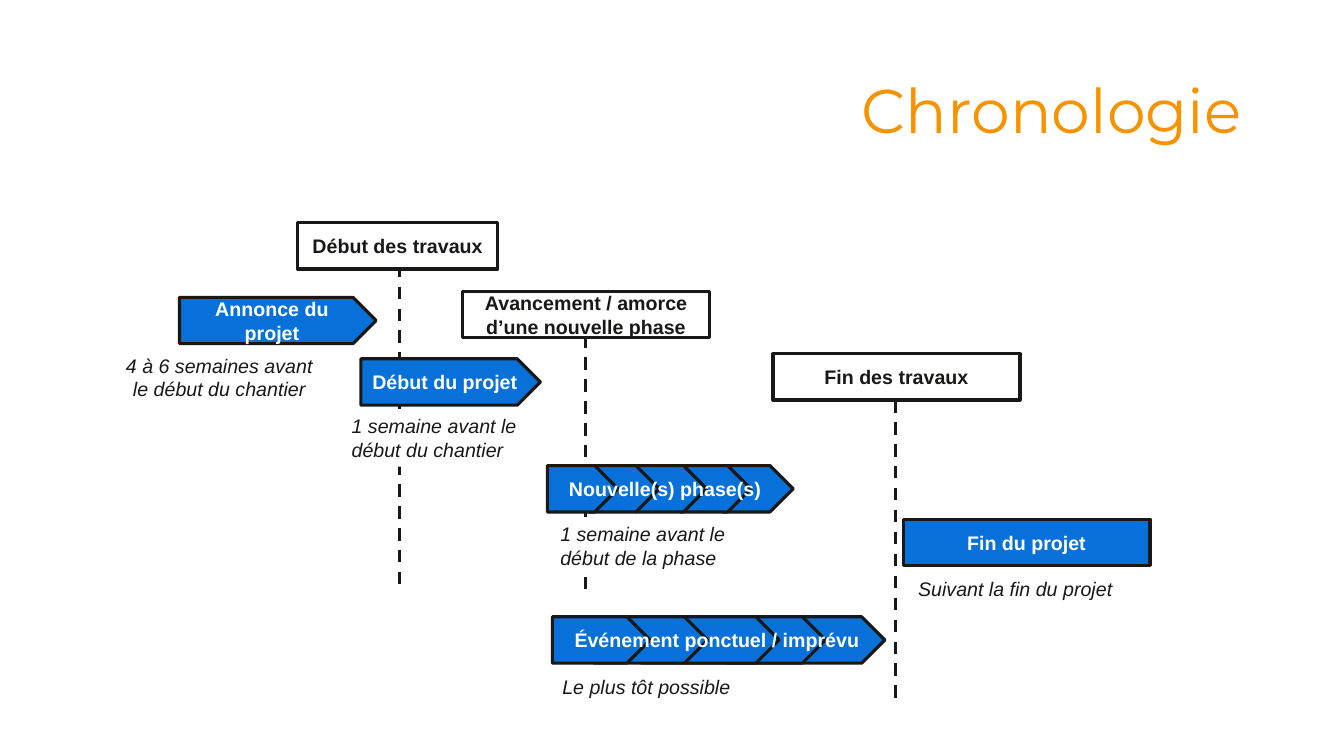
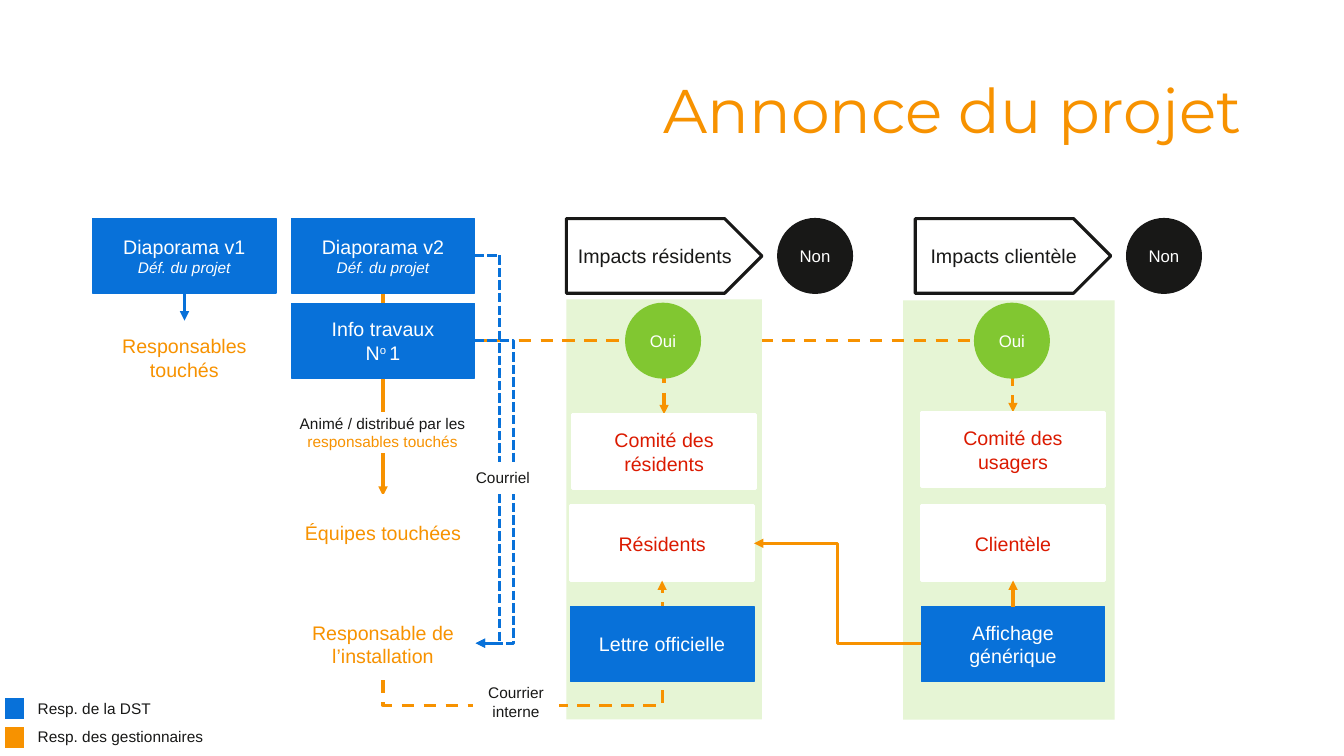
from copy import deepcopy
from dataclasses import dataclass

from lxml.etree import SubElement
from pptx import Presentation
from pptx.dml.color import RGBColor
from pptx.enum.dml import MSO_LINE
from pptx.enum.shapes import MSO_CONNECTOR, MSO_SHAPE
from pptx.enum.text import MSO_ANCHOR, PP_ALIGN
from pptx.oxml.ns import qn
from pptx.util import Pt


@dataclass(frozen=True)
class Theme:
    blue: str = "0871D9"
    orange: str = "F79200"
    ink: str = "181817"
    white: str = "FFFFFF"
    red: str = "DB1A00"
    green: str = "81C731"
    pale_green: str = "E6F5D5"
    title_font: str = "Montserrat"
    body_font: str = "Arial"
    title_size: float = 44
    body_size: float = 14
    answer_size: float = 12
    small_size: float = 11
    stroke: float = 2.25
    thin: float = 1
    legend_border: float = 6


@dataclass(frozen=True)
class Branch:
    question: str
    committee: str
    audience: str
    document: str
    left: float
    audience_left: float
    committee_top: float
    panel: tuple


T = Theme()
STEP_HEIGHT = 33.1
NODE_WIDTH, NODE_HEIGHT = 131, 53.3
TOP_ROW, SECOND_ROW, AUDIENCE_ROW, LAST_ROW = 156.2, 216.7, 361.4, 433.4
SOURCE_COLUMN, INFO_COLUMN = 66.2, 208.1
INFO_AXIS = 273.6
INFO_EDGE = 339.1
BRANCH_AXIS = 69.7  # from the left edge of a branch

BRANCHES = (
    Branch("Impacts résidents", "Comité des résidents", "Résidents",
           "Lettre officielle", 404.6, 407.5, 295.9, (404.6, 213.8, 139.7, 300.2)),
    Branch("Impacts clientèle", "Comité des usagers", "Clientèle",
           "Affichage\vgénérique", 653.8, 658.1, 294.5, (645.1, 214.6, 151.2, 299.5)),
)


# Text
def style_run(run, size, color, bold=False, italic=False, font=T.body_font):
    run.font.name = font
    run.font.size = Pt(size)
    run.font.bold = bold
    run.font.italic = italic
    run.font.color.rgb = RGBColor.from_string(color)


def write(frame, text, size, color, align=PP_ALIGN.CENTER, anchor=MSO_ANCHOR.MIDDLE, **style):
    frame.word_wrap = True
    frame.vertical_anchor = anchor
    frame.text = text
    paragraph = frame.paragraphs[0]
    paragraph.alignment = align
    for run in paragraph.runs:
        style_run(run, size, color, **style)
    for line_break in paragraph._p.findall(qn("a:br")):
        line_break.insert(0, deepcopy(paragraph.runs[0]._r.rPr))
    return paragraph


def add_span(paragraph, text, size, color, raised=False):
    run = paragraph.add_run()
    run.text = text
    style_run(run, size, color)
    if raised:
        run.font._element.set("baseline", "30000")


def add_title(slide, text):
    title = slide.shapes.add_textbox(Pt(139.7), Pt(28.8), Pt(754.6), Pt(104.4))
    paragraph = write(title.text_frame, text, T.title_size, T.orange,
                      PP_ALIGN.RIGHT, font=T.title_font)
    paragraph.line_spacing = 0.9


# Shapes
def add_box(slide, area, fill=None, line=None, width=T.stroke, kind=MSO_SHAPE.RECTANGLE):
    box = slide.shapes.add_shape(kind, *map(Pt, area))
    box.shadow.inherit = False
    if fill:
        box.fill.solid()
        box.fill.fore_color.rgb = RGBColor.from_string(fill)
    else:
        box.fill.background()
    if line:
        box.line.color.rgb = RGBColor.from_string(line)
        box.line.width = Pt(width)
    else:
        box.line.fill.background()
    return box


def add_node(slide, text, left, top, color=None):
    """White node with coloured text, or a blue document when no colour is given."""
    area = (left, top, NODE_WIDTH, NODE_HEIGHT)
    if color:
        node = add_box(slide, area, T.white, T.white)
    else:
        node = add_box(slide, area, T.blue, T.blue, T.thin)
    return write(node.text_frame, text, T.body_size, color or T.white)


def add_label(slide, text, area):
    label = add_box(slide, area, T.white, T.white)
    return write(label.text_frame, text, T.small_size, T.ink)


def add_answer(slide, text, left, top, color):
    answer = add_box(slide, (left, top, NODE_HEIGHT, NODE_HEIGHT), color, color,
                     T.thin, MSO_SHAPE.OVAL)
    write(answer.text_frame, text, T.answer_size, T.white)


# Lines and arrows
def style_line(connector, color, dash, arrow):
    connector.line.color.rgb = RGBColor.from_string(color)
    connector.line.width = Pt(T.stroke)
    if dash:
        connector.line.dash_style = dash
    if arrow:
        SubElement(connector.line._get_or_add_ln(), qn("a:tailEnd"), type="triangle")
    SubElement(connector._element.spPr, qn("a:effectLst"))


def add_line(slide, begin, end, color, dash=None, arrow=True):
    connector = slide.shapes.add_connector(MSO_CONNECTOR.STRAIGHT, *map(Pt, begin + end))
    style_line(connector, color, dash, arrow)


def add_elbow(slide, begin, end, color, dash=None, bend=None, vertical=False):
    """Arrow turning once, or twice at distance bend from its beginning."""
    length = abs(end[0] - begin[0])
    if vertical:  # leaves downwards: a quarter turn about the centre
        length = abs(end[1] - begin[1])
        x, y = ((a + b) / 2 for a, b in zip(begin, end))
        begin, end = ((x + py - y, y - px + x) for px, py in (begin, end))
    connector = slide.shapes.add_connector(MSO_CONNECTOR.ELBOW, *map(Pt, (*begin, *end)))
    properties = connector._element.spPr
    geometry = properties.find(qn("a:prstGeom"))
    if vertical:
        properties.find(qn("a:xfrm")).set("rot", "5400000")
    if bend is None:
        geometry.set("prst", "bentConnector2")
    else:
        SubElement(geometry.find(qn("a:avLst")), qn("a:gd"), name="adj1",
                   fmla=f"val {round(bend / length * 100000)}")
    style_line(connector, color, dash, True)


# Timeline parts
def add_milestone(slide, text, left, top, width, axis, line_top, line_bottom):
    add_line(slide, (axis, line_top), (axis, line_bottom), T.ink, MSO_LINE.DASH, False)
    box = add_box(slide, (left, top, width, STEP_HEIGHT), T.white, T.ink)
    write(box.text_frame, text, T.body_size, T.ink, bold=True)


def add_step(slide, text, left, top, width, kind=MSO_SHAPE.PENTAGON):
    step = add_box(slide, (left, top, width, STEP_HEIGHT), T.blue, T.ink, kind=kind)
    write(step.text_frame, text, T.body_size, T.white, bold=True)


def add_repeated_step(slide, text, left, top, width, chevrons):
    for chevron_left, chevron_width in chevrons:
        add_box(slide, (chevron_left, top, chevron_width, STEP_HEIGHT), T.blue, T.ink,
                kind=MSO_SHAPE.PENTAGON)
    label = add_box(slide, (left, top - 0.4, width, STEP_HEIGHT), kind=MSO_SHAPE.PENTAGON)
    write(label.text_frame, text, T.body_size, T.white, bold=True)


def add_delay(slide, text, left, top, width, height, align=PP_ALIGN.LEFT):
    delay = add_box(slide, (left, top, width, height), T.white)
    write(delay.text_frame, text, T.body_size, T.ink, align, MSO_ANCHOR.TOP, italic=True)


# Legend
def add_legend(slide, entries):
    legend = slide.shapes.add_table(len(entries), 2, Pt(0.7), Pt(496.1), Pt(163), Pt(40)).table
    legend.first_row = legend.horz_banding = False
    legend.columns[0].width, legend.columns[1].width = Pt(19), Pt(144)
    for row, (color, text) in enumerate(entries):
        swatch, caption = legend.cell(row, 0), legend.cell(row, 1)
        write(caption.text_frame, text, T.small_size, T.ink, PP_ALIGN.LEFT)
        SubElement(swatch.text_frame.paragraphs[0]._p, qn("a:endParaRPr"),
                   sz=str(T.small_size * 100))
        for cell, fill in ((swatch, color), (caption, T.white)):
            cell.vertical_anchor = MSO_ANCHOR.MIDDLE
            cell.fill.solid()
            cell.fill.fore_color.rgb = RGBColor.from_string(fill)
            add_cell_borders(cell)


def add_cell_borders(cell):
    properties = cell._tc.get_or_add_tcPr()
    for position, side in enumerate(("lnL", "lnR", "lnT", "lnB")):
        border = SubElement(properties, qn(f"a:{side}"), w=str(Pt(T.legend_border)))
        SubElement(SubElement(border, qn("a:solidFill")), qn("a:srgbClr"), val=T.white)
        properties.insert(position, border)


# Slides
def build_timeline(slide):
    add_title(slide, "Chronologie")
    for milestone in (
        ("Début des travaux", 212.4, 159.1, 143.3, 285.1, 157.7, 416.9),
        ("Avancement / amorce d’une nouvelle phase", 330.5, 208.1, 176.4, 418, 208.1, 423.4),
        ("Fin des travaux", 552.2, 252.7, 176.4, 639.8, 285.8, 504),
    ):
        add_milestone(slide, *milestone)

    add_step(slide, "Annonce du projet", 128.2, 212.4, 140.4)
    add_step(slide, "Début du projet", 257.8, 256.3, 128.2)
    add_step(slide, "Fin du projet", 645.1, 370.8, 176.4, MSO_SHAPE.RECTANGLE)
    add_repeated_step(slide, "Nouvelle(s) phase(s)", 391, 332.6, 176.4,
                      [(left, 50.4) for left in (516.2, 486, 454.3, 420.5, 391)])
    add_repeated_step(slide, "Événement ponctuel / imprévu", 394.6, 440.6, 243.4,
                      [(519.1, 113), (489.6, 100.1), (457.9, 98.6), (424.1, 81.4), (394.6, 69.8)])

    add_delay(slide, "4 à 6 semaines avant le début du chantier",
              77.8, 249.1, 157.7, 41, PP_ALIGN.CENTER)
    for delay in (
        ("1 semaine avant le début du chantier", 244.1, 292.3, 141.8, 41),
        ("1 semaine avant le début de la phase", 393.1, 369.4, 157.7, 41),
        ("Suivant la fin du projet", 648.7, 408.6, 157.7, 24.5),
        ("Le plus tôt possible", 394.6, 478.8, 223.2, 24.5),
    ):
        add_delay(slide, *delay)


def add_branch(slide, branch):
    question = add_box(slide, (branch.left, TOP_ROW, 139.7, NODE_HEIGHT), T.white, T.ink,
                       kind=MSO_SHAPE.PENTAGON)
    write(question.text_frame, branch.question, T.body_size, T.ink)
    add_answer(slide, "Non", branch.left + 151, TOP_ROW, T.ink)
    add_answer(slide, "Oui", branch.left + 42.4, SECOND_ROW, T.green)
    add_node(slide, branch.committee, branch.left + 4.3, branch.committee_top, T.red)
    add_node(slide, branch.audience, branch.audience_left, AUDIENCE_ROW, T.red)


def build_announcement(slide):
    # Panels, the farther one first so that the nearer one hides its arrow
    for branch in reversed(BRANCHES):
        add_box(slide, branch.panel, T.pale_green)
        add_elbow(slide, (INFO_EDGE, 243.4), (branch.left + BRANCH_AXIS, branch.committee_top),
                  T.orange, MSO_LINE.DASH)

    # Project documents and the people who receive them
    add_line(slide, (INFO_AXIS, 208.8), (INFO_AXIS, 354.2), T.orange)
    add_title(slide, "Annonce du projet")
    for left, version in ((SOURCE_COLUMN, "v1"), (INFO_COLUMN, "v2")):
        definition = add_node(slide, f"Diaporama {version}\vDéf. du projet", left, TOP_ROW)
        style_run(definition.runs[1], T.small_size, T.white, italic=True)
    info = add_node(slide, "Info travaux\vN", INFO_COLUMN, SECOND_ROW)
    add_span(info, "o ", T.body_size, T.white, raised=True)
    add_span(info, "1", T.body_size, T.white)
    add_node(slide, "Responsables touchés", SOURCE_COLUMN, 229, T.orange)
    add_node(slide, "Équipes touchées", INFO_COLUMN, 354.2, T.orange)
    add_node(slide, "Responsable de l’installation", INFO_COLUMN, LAST_ROW, T.orange)
    hosts = add_label(slide, "Animé / distribué par les ", (200.2, 295.2, 146.2, 27.4))
    add_span(hosts, "responsables touchés", T.small_size, T.orange)
    add_line(slide, (131.8, 208.8), (131.8, 229), T.blue)

    # E-mails
    for top, bend in ((182.2, 18), (243.4, 28)):
        add_elbow(slide, (INFO_EDGE, top), (INFO_EDGE + 0.72, 459.4), T.blue,
                  MSO_LINE.SQUARE_DOT, bend)
    add_label(slide, "Courriel", (321.1, 331.2, 76.3, 20.2))

    # Branches, internal mail and final documents
    for branch in BRANCHES:
        add_branch(slide, branch)
    add_elbow(slide, (INFO_AXIS, 486), (473, 414.7), T.orange, MSO_LINE.DASH, -18, vertical=True)
    add_label(slide, "Courrier\vinterne", (339.1, 490.3, 59, 22.3))
    for branch in BRANCHES:
        add_node(slide, branch.document, branch.audience_left, LAST_ROW)
    add_line(slide, (723.6, LAST_ROW), (723.6, 414.7), T.orange)
    add_elbow(slide, (658.1, 459.4), (538.6, 388.1), T.orange, bend=59.75)

    add_legend(slide, ((T.blue, "Resp. de la DST"), (T.orange, "Resp. des gestionnaires")))


def main():
    deck = Presentation()
    deck.slide_width, deck.slide_height = Pt(960), Pt(540)
    for build in (build_timeline, build_announcement):
        build(deck.slides.add_slide(deck.slide_layouts[6]))
    deck.save("out.pptx")


if __name__ == "__main__":
    main()
